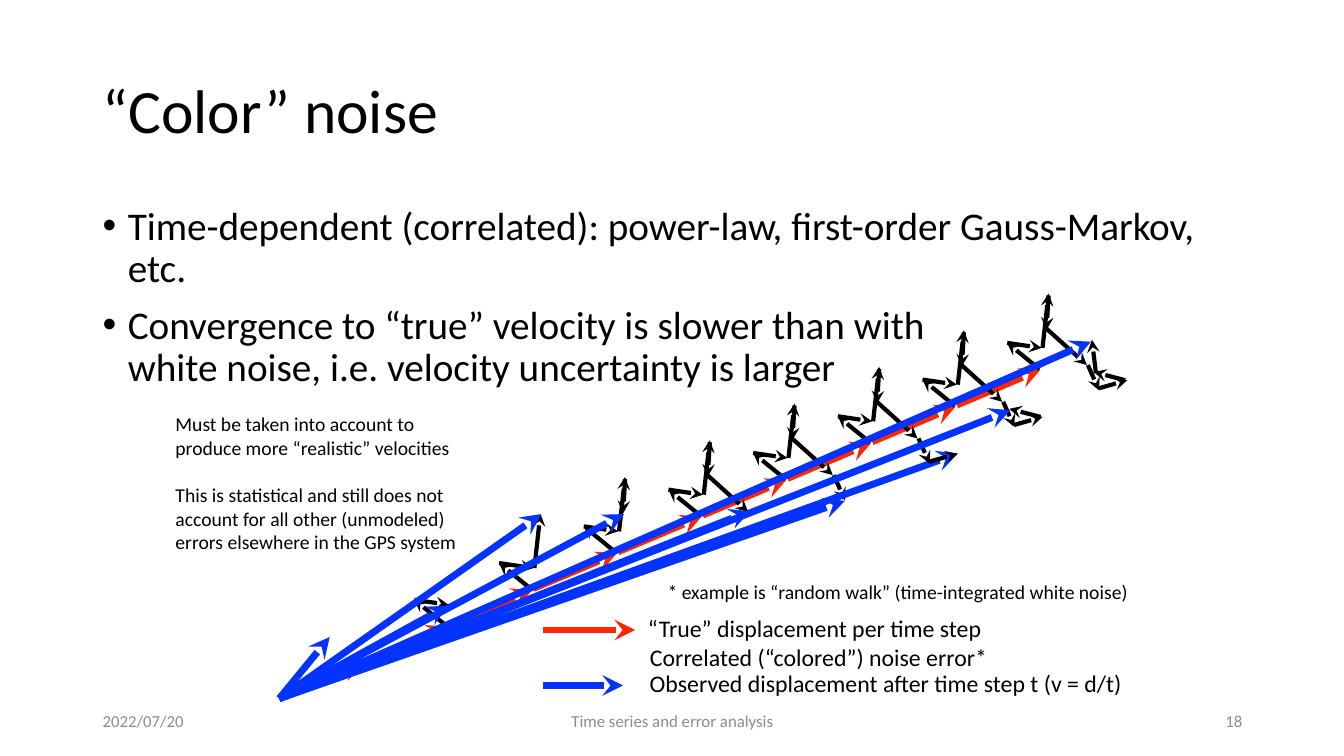
import pptx
import pptx.util
import pptx.dml.color
import pptx.enum.shapes
import pptx.enum.text
import pptx.oxml
import pptx.oxml.ns

Inches, Pt = pptx.util.Inches, pptx.util.Pt
ALIGN = pptx.enum.text.PP_ALIGN
ANCHOR = pptx.enum.text.MSO_ANCHOR
BLACK = pptx.dml.color.RGBColor(0x00, 0x00, 0x00)
GRAY = pptx.dml.color.RGBColor(0x8C, 0x8C, 0x8C)
RED = pptx.dml.color.RGBColor(0xFF, 0x26, 0x00)
BLUE = pptx.dml.color.RGBColor(0x04, 0x33, 0xFF)
FONT = "Calibri"

STEP = (0.84, -0.364)  # true displacement from one epoch to the next
# Random-walk steps as (tail, tip), relative to the true position
NOISE_STEPS = [
    ((0, 0), (-0.32, -0.26)),
    ((-0.32, -0.26), (0.02, -0.21)),
    ((0.03, -0.21), (0.09, -0.75)),
    ((0.09, -0.73), (0.07, -0.39)),
    ((0.06, -0.41), (0.47, -0.04)),
    ((0.48, -0.04), (0.59, 0.21)),
    ((0.59, 0.19), (0.87, 0.11)),
    ((0.85, 0.11), (0.54, 0.03)),
    ((0.56, 0.04), (0.52, -0.29)),
]
# Tips of the observed displacements, relative to the start
EARLY_TIPS = [(1.67, -0.92), (2.6, -1.83), (3.42, -1.83), (6.73, -2.43)]
LATE_TIPS = [(4.67, -1.86), (5.61, -1.96), (7.25, -2.86), (8.05, -3.54)]


def add_text(page, box, paras, size, color=BLACK, align=ALIGN.LEFT, anchor=ANCHOR.TOP,
             insets=(0.1, 0.05), wrap=True, line_spacing=None, space_before=0, bullet=False):
    frame = page.shapes.add_textbox(*map(Inches, box)).text_frame
    frame.word_wrap = wrap
    frame.vertical_anchor = anchor
    frame.margin_left = frame.margin_right = Inches(insets[0])
    frame.margin_top = frame.margin_bottom = Inches(insets[1])
    for index, text in enumerate(paras):
        para = frame.paragraphs[0] if index == 0 else frame.add_paragraph()
        para.text = text
        para.alignment = align
        para.line_spacing = line_spacing
        para.space_before = Pt(space_before)
        for span in para.runs:
            span.font.name, span.font.size = FONT, Pt(size)
            span.font.color.rgb = color
        if bullet:
            props = para._p.get_or_add_pPr()
            props.set("marL", str(Inches(0.25)))
            props.set("indent", str(Inches(-0.25)))
            for tag, name, value in (("a:buFont", "typeface", "Arial"), ("a:buChar", "char", "•")):
                mark = pptx.oxml.ns.qn(tag)
                props.append(props.makeelement(mark, {name: value}))


def add_arrow(page, tail, tip, color, width=5):
    arrow = page.shapes.add_connector(
        pptx.enum.shapes.MSO_CONNECTOR.STRAIGHT, *map(Inches, (*tail, *tip)))
    arrow.line.color.rgb = color
    arrow.line.width = Pt(width)
    line = arrow.line._get_or_add_ln()
    line.append(line.makeelement(pptx.oxml.ns.qn("a:tailEnd"), {"type": "stealth"}))
    props = arrow._element.spPr
    props.append(props.makeelement(pptx.oxml.ns.qn("a:effectLst"), {}))


def shift(point, offset, times=1):
    return point[0] + offset[0] * times, point[1] + offset[1] * times


def add_heading(page, box):
    add_text(page, box, ["“Color” noise"], 44, anchor=ANCHOR.MIDDLE, line_spacing=0.9)


def add_body(page, box):
    add_text(page, box, [
        "Time-dependent (correlated): power-law, first-order Gauss-Markov, etc.",
        "Convergence to “true” velocity is slower than with\v"
        "white noise, i.e. velocity uncertainty is larger",
    ], 28, line_spacing=0.9, space_before=10, bullet=True)


def add_footer(page, box):
    left, top, width, height = box
    for offset, part, text, align in (
            (0, 3, "2022/07/20", ALIGN.LEFT),
            (3.5, 4.5, "Time series and error analysis", ALIGN.CENTER),
            (width - 3, 3, "18", ALIGN.RIGHT)):
        add_text(page, (left + offset, top, part, height), [text], 12, color=GRAY,
                 align=align, anchor=ANCHOR.MIDDLE)


def add_legend(page, box):
    left, top, width, height = box
    label = dict(align=ALIGN.CENTER, anchor=ANCHOR.MIDDLE, insets=(0.04, 0.04), wrap=False)
    add_text(page, (left + 1.16, top, 4.71, 0.31),
             ["* example is “random walk” (time-integrated white noise)"], 14, **label)
    for offset, drop, part, text in (
            (0.98, 0.34, 3.42, "“True” displacement per time step"),
            (0.99, 0.63, 3.48, "Correlated (“colored”) noise error*"),
            (0.99, 0.89, 4.81, "Observed displacement after time step t (v = d/t)")):
        add_text(page, (left + offset, top + drop, part, 0.36), [text], 17, **label)
    for drop, length, color in ((0.54, 0.91, RED), (1.09, 0.79, BLUE)):
        start = (left, top + drop)
        add_arrow(page, start, shift(start, (length, 0)), color)


def add_random_walk(page, start, epoch):
    """Draw the noise steps accumulated up to the given epoch."""
    base = shift(shift(start, (1.66, -0.72)), STEP, epoch - 2)
    for tail, tip in NOISE_STEPS[:epoch]:
        add_arrow(page, shift(base, tail), shift(base, tip), BLACK, width=3)


def add_displacements(page, start):
    for epoch in range(9):
        tail = shift(start, STEP, epoch)
        add_arrow(page, tail, shift(tail, (0.83, -0.35)), RED)
    add_arrow(page, start, shift(start, (0.5, -0.61)), BLUE)
    for epoch in (2, 3, 4, 5, 6, 8, 9):
        add_random_walk(page, start, epoch)
    for tip in EARLY_TIPS:
        add_arrow(page, start, shift(start, tip), BLUE)
    add_random_walk(page, start, 7)
    for tip in LATE_TIPS:
        add_arrow(page, start, shift(start, tip), BLUE)


def add_remark(page, box):
    add_text(page, box, [
        "Must be taken into account to produce more “realistic” velocities",
        "This is statistical and still does not account for all other (unmodeled) "
        "errors elsewhere in the GPS system",
    ], 14, insets=(0, 0), space_before=17)


def main():
    deck = pptx.Presentation()
    deck.slide_width, deck.slide_height = Inches(13.33), Inches(7.5)
    page = deck.slides.add_slide(deck.slide_layouts[6])
    add_heading(page, (0.92, 0.4, 11.5, 1.45))
    add_body(page, (0.92, 2, 11.5, 4.76))
    add_footer(page, (0.92, 6.95, 11.5, 0.4))
    add_legend(page, (5.39, 5.71, 5.87, 1.25))
    add_displacements(page, (2.77, 6.93))
    add_remark(page, (1.74, 4.09, 2.89, 1.45))
    deck.save("out.pptx")


if __name__ == "__main__":
    main()
